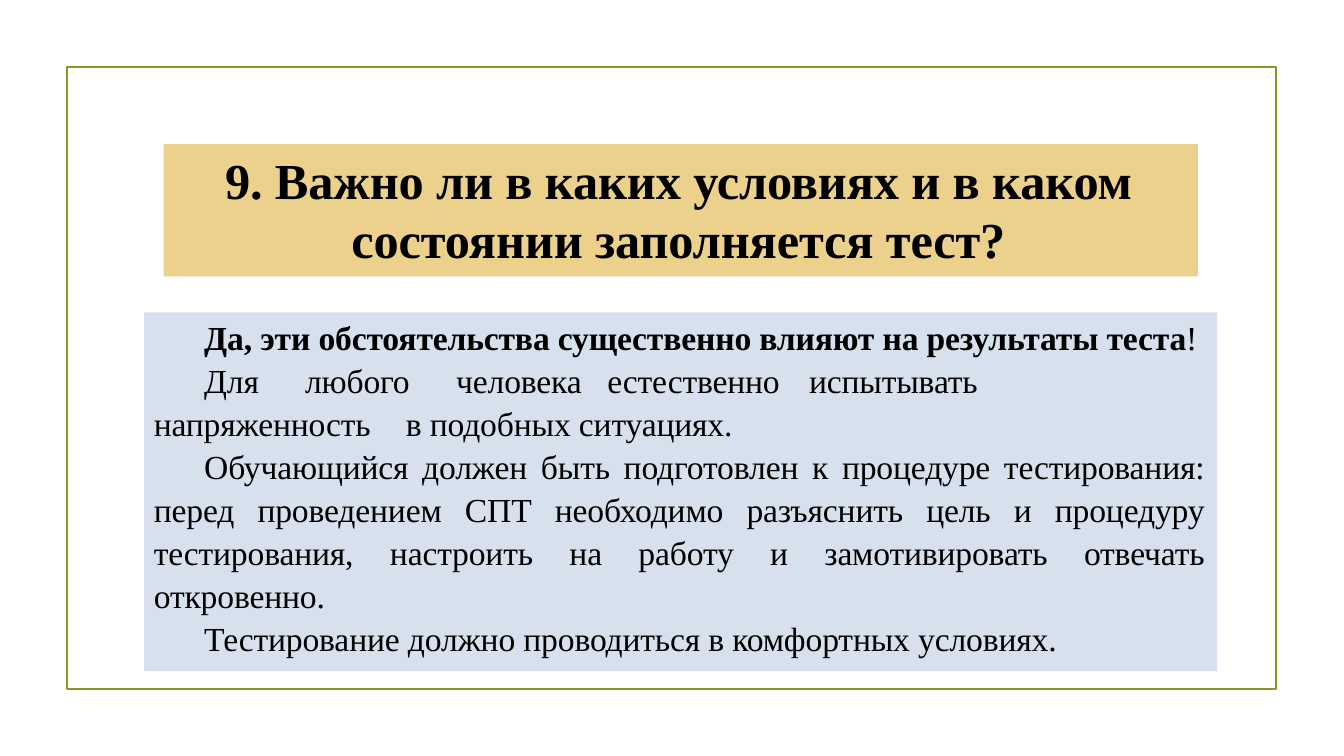
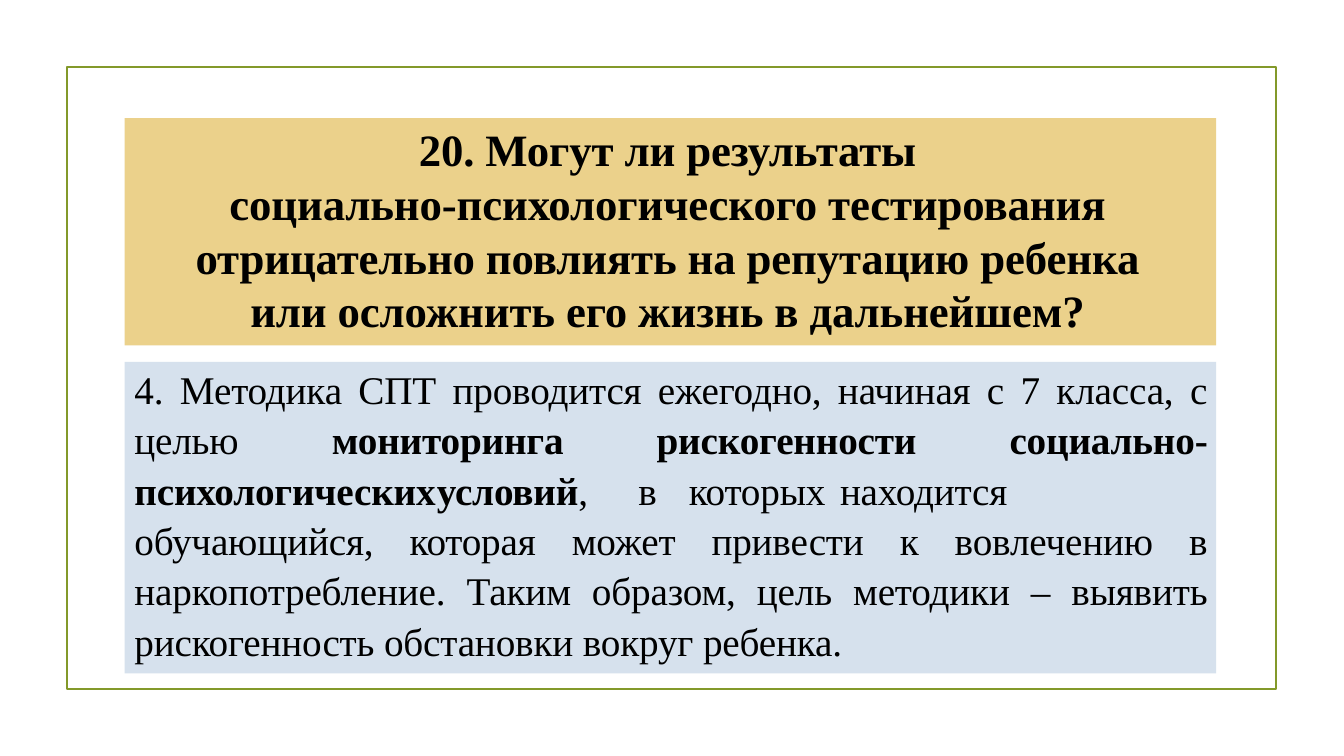
"""Build two question-and-answer slides about socio-psychological testing."""
from pptx import Presentation
from pptx.dml.color import RGBColor
from pptx.enum.shapes import MSO_SHAPE
from pptx.enum.text import MSO_ANCHOR, MSO_AUTO_SIZE, PP_ALIGN
from pptx.oxml.ns import qn
from pptx.util import Pt
from lxml.etree import SubElement

COLORS = {"frame": "83992A", "title": "EBD18B", "answer": "D6E1ED", "text": "000000"}
FONT = "Times New Roman"
FRAME = (47.7, 48, 864, 444)
SIDE_INSET = 7
INDENT = 36

QUESTIONS = [
    {
        "title": "9. Важно ли в каких условиях и в каком состоянии заполняется тест?",
        "title_box": (116.8, 103, 738.8, 94.5),
        "title_style": {"size": 36, "pitch": 41.9, "top": 5, "right": 10},
        "answer": [
            {"indent": INDENT, "align": PP_ALIGN.LEFT, "spans": [
                ("Да, эти обстоятельства существенно влияют на результаты теста", True),
                ("!", False)]},
            {"indent": 0, "align": PP_ALIGN.LEFT,
             "tabs": (INDENT, 144, 216, 288, 432, 576), "spans": [
                ("\tДля\tлюбого\tчеловека\tестественно\tиспытывать\n"
                 "напряженность\tв подобных ситуациях.", False)]},
            {"indent": INDENT, "align": PP_ALIGN.JUSTIFY, "spans": [
                ("Обучающийся должен быть подготовлен к процедуре тестирования: "
                 "перед проведением СПТ необходимо разъяснить цель и процедуру "
                 "тестирования, настроить на работу и замотивировать отвечать "
                 "откровенно.", False)]},
            {"indent": INDENT, "align": PP_ALIGN.LEFT, "spans": [
                ("Тестирование должно проводиться в комфортных условиях.", False)]},
        ],
        "answer_box": (102.9, 223.2, 766.6, 256.2),
        "answer_style": {"size": 24, "pitch": 30.7, "top": 1.3, "right": 9},
    },
    {
        "title": "20. Могут ли результаты\n"
                 "социально-психологического тестирования\n"
                 "отрицательно повлиять на репутацию ребенка\n"
                 "или осложнить его жизнь в дальнейшем?",
        "title_box": (89, 84.3, 779.6, 162.5),
        "title_style": {"size": 32, "pitch": 38.3, "top": 3, "right": 11},
        "answer": [
            {"indent": 0, "align": PP_ALIGN.JUSTIFY,
             "tabs": (269.5, 430, 495, 645.5), "spans": [
                ("4. Методика СПТ проводится ежегодно, начиная с 7 класса, с целью ", False),
                ("мониторинга рискогенности социально-психологических\tусловий", True),
                (",\tв\tкоторых\tнаходится\n"
                 "обучающийся, которая может привести к вовлечению в "
                 "наркопотребление. Таким образом, цель методики – "
                 "выявить рискогенность обстановки вокруг ребенка.", False)]},
        ],
        "answer_box": (89, 258.4, 779.6, 222.6),
        "answer_style": {"size": 28, "pitch": 36, "top": 0, "right": 6},
    },
]


def color(name):
    return RGBColor.from_string(COLORS[name])


def add_rectangle(page, bounds):
    box = page.shapes.add_shape(MSO_SHAPE.RECTANGLE, *map(Pt, bounds))
    box.shadow.inherit = False
    return box


def add_frame(page):
    frame = add_rectangle(page, FRAME)
    frame.fill.background()
    frame.line.color.rgb = color("frame")
    frame.line.width = Pt(1.25)


def fill_panel(box, fill, paragraphs, style):
    box.fill.solid()
    box.fill.fore_color.rgb = color(fill)
    box.line.fill.background()
    text = box.text_frame
    text.word_wrap = True
    text.auto_size = MSO_AUTO_SIZE.NONE
    text.vertical_anchor = MSO_ANCHOR.TOP
    text.margin_left, text.margin_right = Pt(SIDE_INSET), Pt(style["right"])
    text.margin_top, text.margin_bottom = Pt(style["top"]), 0
    for index, content in enumerate(paragraphs):
        para = text.add_paragraph() if index else text.paragraphs[0]
        format_paragraph(para, content, style["pitch"])
        for words, bold in content["spans"]:
            add_words(para, words, bold, style["size"])


def format_paragraph(para, content, pitch):
    para.alignment = content["align"]
    para.line_spacing = Pt(pitch)
    para.space_before = para.space_after = Pt(0)
    properties = para._p.get_or_add_pPr()
    properties.set("marL", "0")
    properties.set("indent", str(Pt(content["indent"])))
    if "tabs" in content:
        stops = SubElement(properties, qn("a:tabLst"))
        for position in content["tabs"]:
            SubElement(stops, qn("a:tab"), pos=str(Pt(position)), algn="l")


def add_words(para, words, bold, size):
    for index, line in enumerate(words.split("\n")):
        if index:
            para.add_line_break()
        span = para.add_run()
        span.text = line
        span.font.name = FONT
        span.font.size = Pt(size)
        span.font.bold = bold
        span.font.color.rgb = color("text")
        span._r.get_or_add_rPr().set("spc", "-10")


def add_question(deck, question):
    page = deck.slides.add_slide(deck.slide_layouts[5])
    add_frame(page)
    title = page.shapes.title
    title.left, title.top, title.width, title.height = map(Pt, question["title_box"])
    heading = {"indent": 0, "align": PP_ALIGN.CENTER, "spans": [(question["title"], True)]}
    fill_panel(title, "title", [heading], question["title_style"])
    answer = add_rectangle(page, question["answer_box"])
    fill_panel(answer, "answer", question["answer"], question["answer_style"])


def main():
    deck = Presentation()
    deck.slide_width, deck.slide_height = Pt(960), Pt(540)
    for question in QUESTIONS:
        add_question(deck, question)
    deck.save("out.pptx")


if __name__ == "__main__":
    main()
